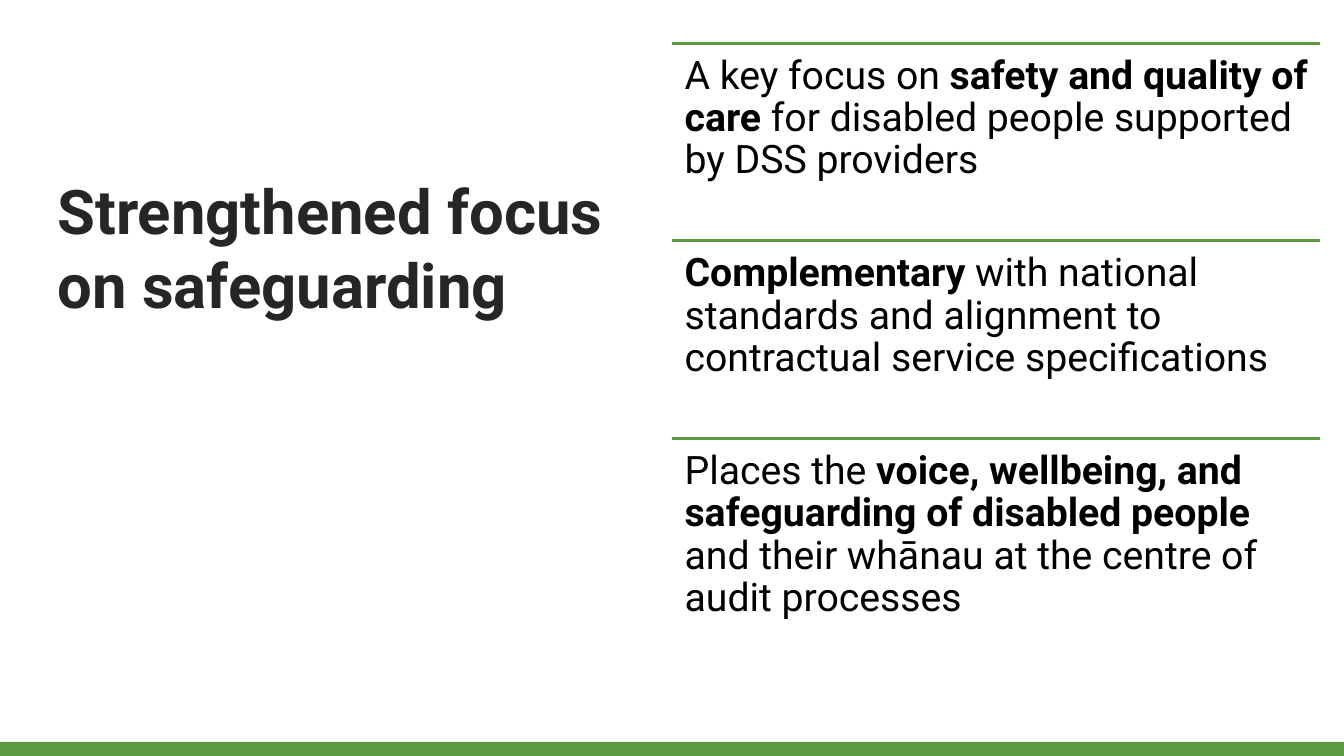
"""Build the slide on the strengthened focus on safeguarding."""
import pptx
import pptx.dml.color
import pptx.enum.shapes
import pptx.enum.text
import pptx.oxml
import pptx.util
from pptx.util import Inches

COLOURS = {"green": "5C9A42", "title": "262626", "body": "000000"}
FONT = "Roboto"
SLIDE_WIDTH, SLIDE_HEIGHT = 13.33, 7.5
BAR_HEIGHT = 0.14
POINT_LEFT, POINT_TOP, POINT_WIDTH, POINT_HEIGHT = 6.67, 0.43, 6.42, 1.96
POINTS = [
    [("A key focus on ", False), ("safety and quality of care ", True),
     ("for disabled people supported by DSS providers", False)],
    [("Complementary ", True),
     ("with national standards and alignment to contractual service specifications", False)],
    [("Places the ", False), ("voice, wellbeing, and safeguarding of disabled people ", True),
     ("and their whānau at the centre of audit processes", False)],
]


def colour(name):
    """Return the named colour."""
    return pptx.dml.color.RGBColor.from_string(COLOURS[name])


def add_text(paragraph, text, size, bold, colour_name):
    """Add a formatted run to a paragraph."""
    run = paragraph.add_run()
    run.text = text
    font_format = {"name": FONT, "size": pptx.util.Pt(size), "bold": bold}
    for name, value in font_format.items():
        setattr(run.font, name, value)
    run.font.color.rgb = colour(colour_name)


presentation = pptx.Presentation()
presentation.slide_width = Inches(SLIDE_WIDTH)
presentation.slide_height = Inches(SLIDE_HEIGHT)
slide = presentation.slides.add_slide(presentation.slide_layouts[5])

bar = slide.shapes.add_shape(
    pptx.enum.shapes.MSO_SHAPE.RECTANGLE,
    Inches(0), Inches(SLIDE_HEIGHT - BAR_HEIGHT), Inches(SLIDE_WIDTH), Inches(BAR_HEIGHT))
bar.shadow.inherit = False
bar.fill.solid()
bar.fill.fore_color.rgb = colour("green")
bar.line.fill.background()

title = slide.shapes.title
title_place = {"left": 0.57, "top": 1.46, "width": 5.53, "height": 1.92}
for name, value in title_place.items():
    setattr(title, name, Inches(value))
title_format = {
    "margin_left": 0, "margin_top": 0, "margin_right": 0, "margin_bottom": Inches(0.2),
    "word_wrap": True, "auto_size": pptx.enum.text.MSO_AUTO_SIZE.NONE,
    "vertical_anchor": pptx.enum.text.MSO_ANCHOR.BOTTOM,
}
for name, value in title_format.items():
    setattr(title.text_frame, name, value)
title_paragraph = title.text_frame.paragraphs[0]
title_paragraph.alignment = pptx.enum.text.PP_ALIGN.LEFT
add_text(title_paragraph, "Strengthened focus on safeguarding", 44, True, "title")

point_format = {f"margin_{side}": Inches(0.12) for side in ("left", "top", "right", "bottom")}
point_format["word_wrap"] = True
for index, runs in enumerate(POINTS):
    top = Inches(POINT_TOP + index * POINT_HEIGHT)
    rule = slide.shapes.add_connector(
        pptx.enum.shapes.MSO_CONNECTOR.STRAIGHT,
        Inches(POINT_LEFT), top, Inches(POINT_LEFT + POINT_WIDTH), top)
    rule.line.color.rgb = colour("green")
    rule.line.width = pptx.util.Pt(2)
    rule.element.spPr.append(pptx.oxml.parse_xml(
        '<a:effectLst xmlns:a="http://schemas.openxmlformats.org/drawingml/2006/main"/>'))

    point = slide.shapes.add_textbox(
        Inches(POINT_LEFT), top, Inches(POINT_WIDTH), Inches(POINT_HEIGHT))
    for name, value in point_format.items():
        setattr(point.text_frame, name, value)
    paragraph = point.text_frame.paragraphs[0]
    paragraph.line_spacing = 0.9
    for text, bold in runs:
        add_text(paragraph, text, 28, bold, "body")

presentation.save("out.pptx")
